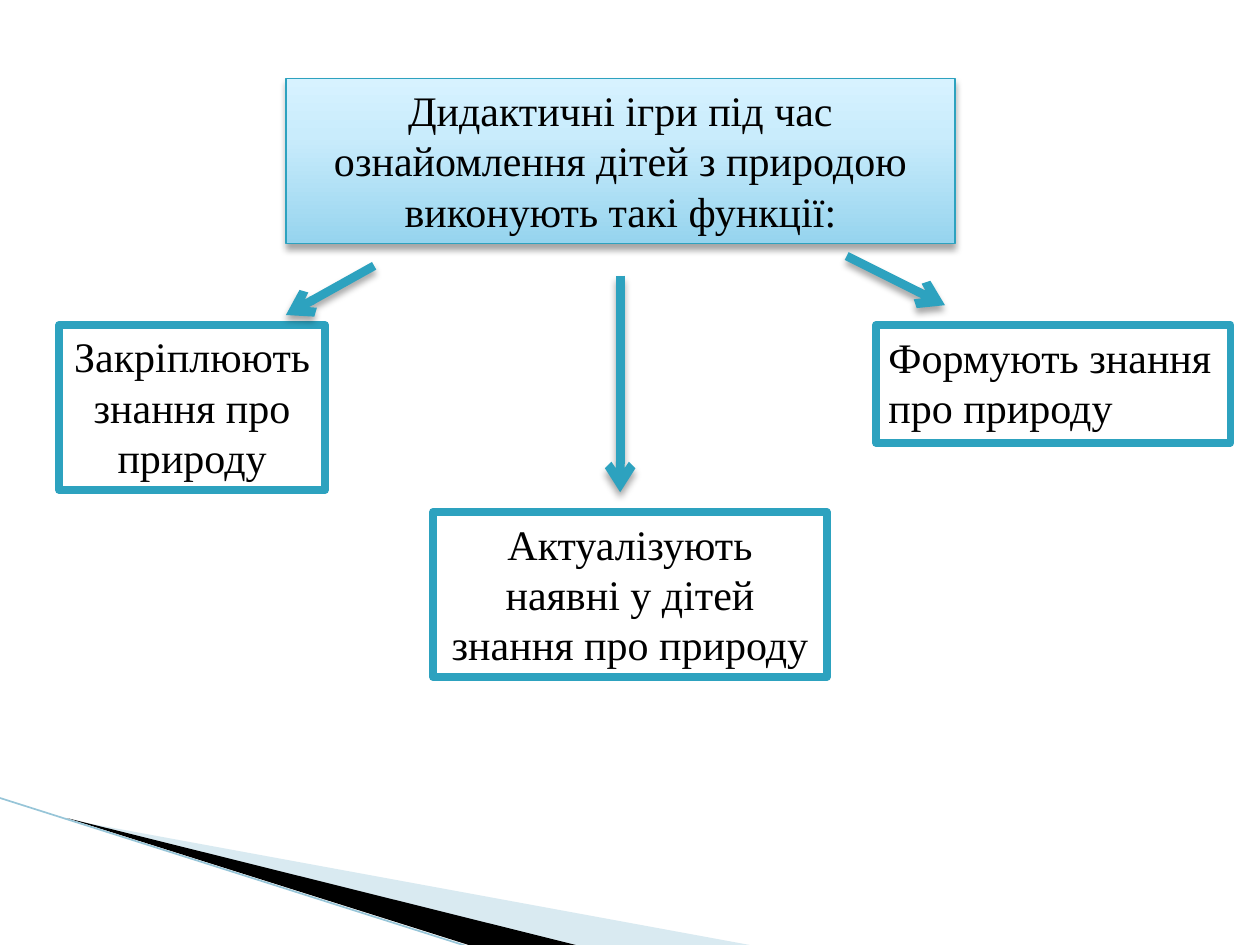
from copy import deepcopy

from lxml.etree import SubElement
from pptx import Presentation
from pptx.dml.color import RGBColor
from pptx.enum.shapes import MSO_CONNECTOR as CONNECTOR, MSO_SHAPE as SHAPE
from pptx.enum.text import MSO_ANCHOR as ANCHOR, MSO_AUTO_SIZE as AUTO_SIZE, PP_ALIGN as ALIGN
from pptx.oxml.ns import qn
from pptx.util import Pt

COLORS = {
    "teal": "2DA2BF", "black": "000000", "white": "FFFFFF",
    "pale": "A0CBDC", "edge": "97C5D8",
    "deep_sky": "96D4EE", "sky": "C9ECFC", "light_sky": "D7F2FF",
}
RGB = {name: RGBColor.from_string(value) for name, value in COLORS.items()}

presentation = Presentation()
presentation.slide_width, presentation.slide_height = Pt(720), Pt(540)
slide = presentation.slides.add_slide(presentation.slide_layouts[6])
shapes = slide.shapes


def add_shadow(properties):
    effects = properties.find(qn("a:effectLst"))
    shadow = SubElement(effects, qn("a:outerShdw"), blurRad=str(Pt(4)),
                        dist=str(Pt(3)), dir="5400000", rotWithShape="0")
    color = SubElement(shadow, qn("a:srgbClr"), val=COLORS["black"])
    SubElement(color, qn("a:alpha"), val="35000")


def add_line(start, end, color, width):
    line = shapes.add_connector(CONNECTOR.STRAIGHT, *map(Pt, start + end))
    line.line.color.rgb = RGB[color]
    line.line.width = Pt(width)
    SubElement(line._element.spPr, qn("a:effectLst"))
    return line


# Corner wedges: points, colour, opacity in percent
wedges = [
    ([(39.6, 468.5), (428.4, 540), (328.3, 540)], "pale", 40),
    ([(38.2, 467.5), (329, 540), (267.8, 540)], "black", 100),
]
for points, color, opacity in wedges:
    corners = [(Pt(x), Pt(y)) for x, y in points]
    builder = shapes.build_freeform(*corners[0])
    builder.add_line_segments(corners[1:])
    wedge = builder.convert_to_shape()
    wedge.shadow.inherit = False
    wedge.fill.solid()
    wedge.fill.fore_color.rgb = RGB[color]
    wedge.line.fill.background()
    if opacity < 100:
        fill_color = wedge._element.spPr.find(qn("a:solidFill"))[0]
        SubElement(fill_color, qn("a:alpha"), val=str(opacity * 1000))
add_line((-0.7, 455.8), (267.8, 541), "edge", 0.95)

# Heading and the three functions: text, frame, border width, alignment
boxes = [
    ("Дидактичні ігри під час ознайомлення дітей з природою виконують такі функції:",
     (163.4, 44.8, 382.3, 94.5), 0.75, ALIGN.CENTER),
    ("Закріплюють знання про природу", (33.8, 185.6, 152, 94.5), 4.33, ALIGN.CENTER),
    ("Актуалізують наявні у дітей знання про природу",
     (247.5, 292.5, 225, 94.5), 4.33, ALIGN.CENTER),
    ("Формують знання про природу", (500.6, 185.6, 202.5, 67.5), 4.33, ALIGN.LEFT),
]
box_shapes = []
for text, frame, border, alignment in boxes:
    box = shapes.add_shape(SHAPE.RECTANGLE, *map(Pt, frame))
    box.shadow.inherit = False
    box.fill.solid()
    box.fill.fore_color.rgb = RGB["white"]
    box.line.color.rgb = RGB["teal"]
    box.line.width = Pt(border)
    SubElement(box._element.spPr.find(qn("a:ln")), qn("a:round"))
    text_frame = box.text_frame
    text_frame.word_wrap = True
    text_frame.auto_size = AUTO_SIZE.SHAPE_TO_FIT_TEXT
    text_frame.vertical_anchor = ANCHOR.TOP
    paragraph = text_frame.paragraphs[0]
    paragraph.text = text
    paragraph.alignment = alignment
    font = paragraph.runs[0].font
    for name, value in {"name": "Times New Roman", "size": Pt(24)}.items():
        setattr(font, name, value)
    font.color.rgb = RGB["black"]
    box_shapes.append(box)

# Heading gradient, dark at the bottom, with a shadow
heading = box_shapes[0]
heading.fill.gradient()
heading.fill.gradient_angle = 90
stop_list = heading._element.spPr.find(".//" + qn("a:gsLst"))
stop_list.insert(1, deepcopy(stop_list[0]))
stops = [(0, "deep_sky"), (0.65, "sky"), (1, "light_sky")]
for stop, (position, color) in zip(heading.fill.gradient_stops, stops):
    stop.position = position
    stop.color.rgb = RGB[color]
add_shadow(heading._element.spPr)

# Arrows from the heading to the functions
arrows = [
    ((354.4, 157.5), (354.4, 281.3)),
    ((213.8, 151.9), (163.4, 180)),
    ((483.8, 146.3), (540, 174.4)),
]
for start, end in arrows:
    arrow = add_line(start, end, "teal", 5)
    properties = arrow._element.spPr
    SubElement(properties.find(qn("a:ln")), qn("a:tailEnd"), type="arrow")
    add_shadow(properties)

presentation.save("out.pptx")
